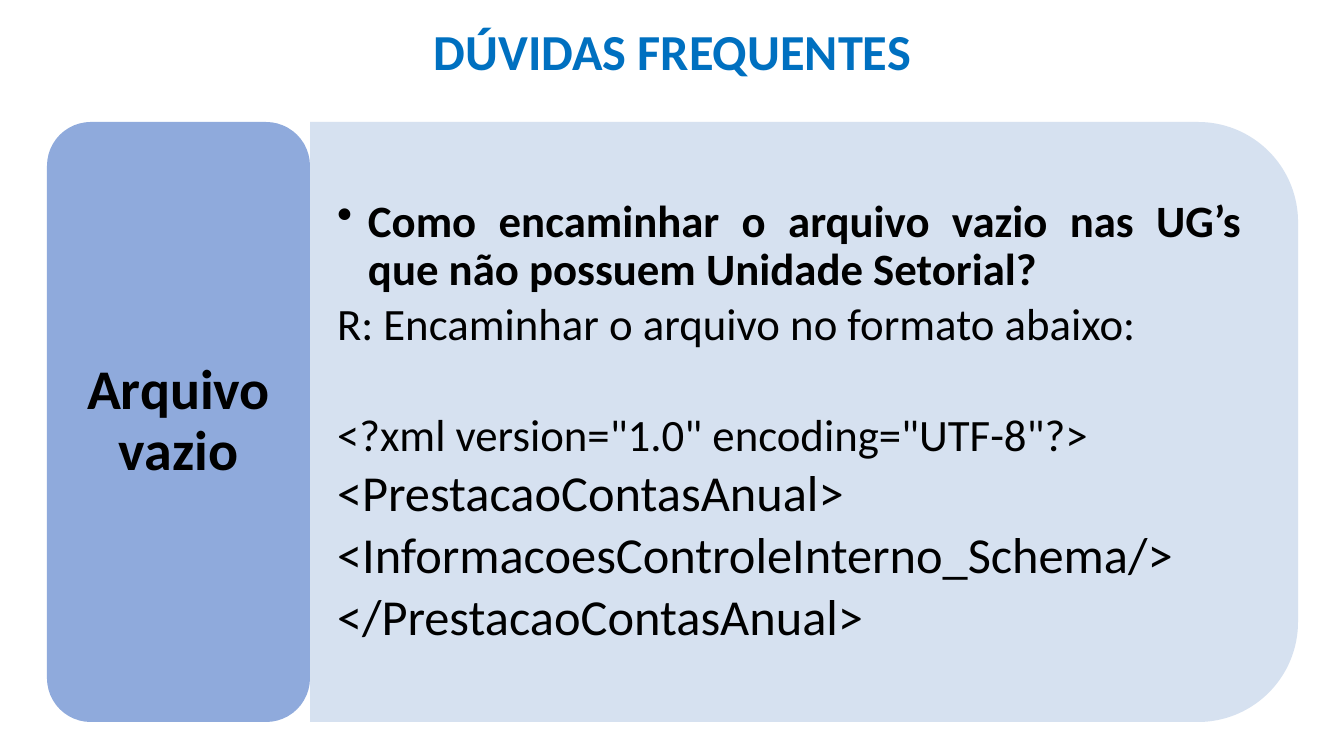
from lxml import etree
from pptx import Presentation
from pptx.dml.color import RGBColor
from pptx.enum import shapes, text
from pptx.oxml import ns
from pptx.util import Pt

# Content
TITLE = "DÚVIDAS FREQUENTES"
TOPIC = "Arquivo vazio"
# text, size, bold, bullet, space before (pt)
LINES = [
    ("Como encaminhar o arquivo vazio nas UG’s que não possuem Unidade Setorial?",
     32, True, True, 0),
    ("R: Encaminhar o arquivo no formato abaixo:", 32, False, False, 0),
    ('<?xml version="1.0" encoding="UTF-8"?>', 32, False, False, 40),
    ("<PrestacaoContasAnual>", 36, False, False, 0),
    ("<InformacoesControleInterno_Schema/>", 36, False, False, 0),
    ("</PrestacaoContasAnual>", 36, False, False, 0),
]

# Style
FONT = "Calibri"
BLUE = RGBColor(0x00, 0x70, 0xC0)
BLACK = RGBColor(0x00, 0x00, 0x00)
PALE = RGBColor(0xD2, 0xDE, 0xEF)
MID = RGBColor(0x8F, 0xAA, 0xDC)
KIND = shapes.MSO_SHAPE
ALIGN = text.PP_ALIGN

# Layout in px
WIDE, HIGH = 1344, 756
LEFT, TOP, SPLIT, RIGHT, TALL = 47, 122, 310, 1298, 600
INDENT = 31


def px(n):
    return round(n * 914400 / 100.8)


def add_block(kind, box, color):
    block = slide.shapes.add_shape(kind, *map(px, box))
    block.shadow.inherit = False
    block.fill.solid()
    block.fill.fore_color.rgb = color
    block.line.fill.background()
    return block


def add_box(box, inset_x, inset_y, anchor):
    frame = slide.shapes.add_textbox(*map(px, box)).text_frame
    frame.word_wrap = True
    frame.vertical_anchor = anchor
    frame.margin_left = frame.margin_right = px(inset_x)
    frame.margin_top = frame.margin_bottom = px(inset_y)
    return frame


def add_run(para, words, size, bold, color, align):
    para.alignment = align
    run = para.add_run()
    run.text = words
    font = run.font
    font.name, font.size, font.bold = FONT, Pt(size), bold
    font.color.rgb = color


def hang(para, bullet):
    props = para._p.get_or_add_pPr()
    props.set("marL", str(px(INDENT)))
    props.set("indent", str(-px(INDENT)))
    if bullet:
        etree.SubElement(props, ns.qn("a:buChar")).set("char", "•")
    else:
        etree.SubElement(props, ns.qn("a:buNone"))


deck = Presentation()
deck.slide_width, deck.slide_height = px(WIDE), px(HIGH)
slide = deck.slides.add_slide(deck.slide_layouts[6])

# Title
frame = add_box((73, 15, 1199, 72), 10, 5, text.MSO_ANCHOR.TOP)
add_run(frame.paragraphs[0], TITLE, 36, True, BLUE, ALIGN.CENTER)

# Answer panel, turned so its round corners face right
span = RIGHT - SPLIT
shift = (span - TALL) // 2
panel = add_block(KIND.ROUND_2_SAME_RECTANGLE,
                  (SPLIT + shift, TOP - shift, TALL, span), PALE)
panel.rotation = 90
tint = panel.fill._xPr.find(".//" + ns.qn("a:srgbClr"))
etree.SubElement(tint, ns.qn("a:alpha")).set("val", "90000")

# Question and answer
frame = add_box((SPLIT, 152, 959, 541), 27, 14, text.MSO_ANCHOR.MIDDLE)
for i, (words, size, bold, bullet, before) in enumerate(LINES):
    para = frame.add_paragraph() if i else frame.paragraphs[0]
    hang(para, bullet)
    para.line_spacing = 0.9
    para.space_after = Pt(size * 0.15)
    if before:
        para.space_before = Pt(before)
    add_run(para, words, size, bold, BLACK, ALIGN.JUSTIFY)

# Topic block
add_block(KIND.ROUNDED_RECTANGLE, (LEFT, TOP, SPLIT - LEFT, TALL), MID)
frame = add_box((60, 135, 237, 574), 17, 8, text.MSO_ANCHOR.MIDDLE)
para = frame.paragraphs[0]
para.line_spacing = 0.9
para.space_after = Pt(14)
add_run(para, TOPIC, 40, True, BLACK, ALIGN.CENTER)

deck.save("out.pptx")
